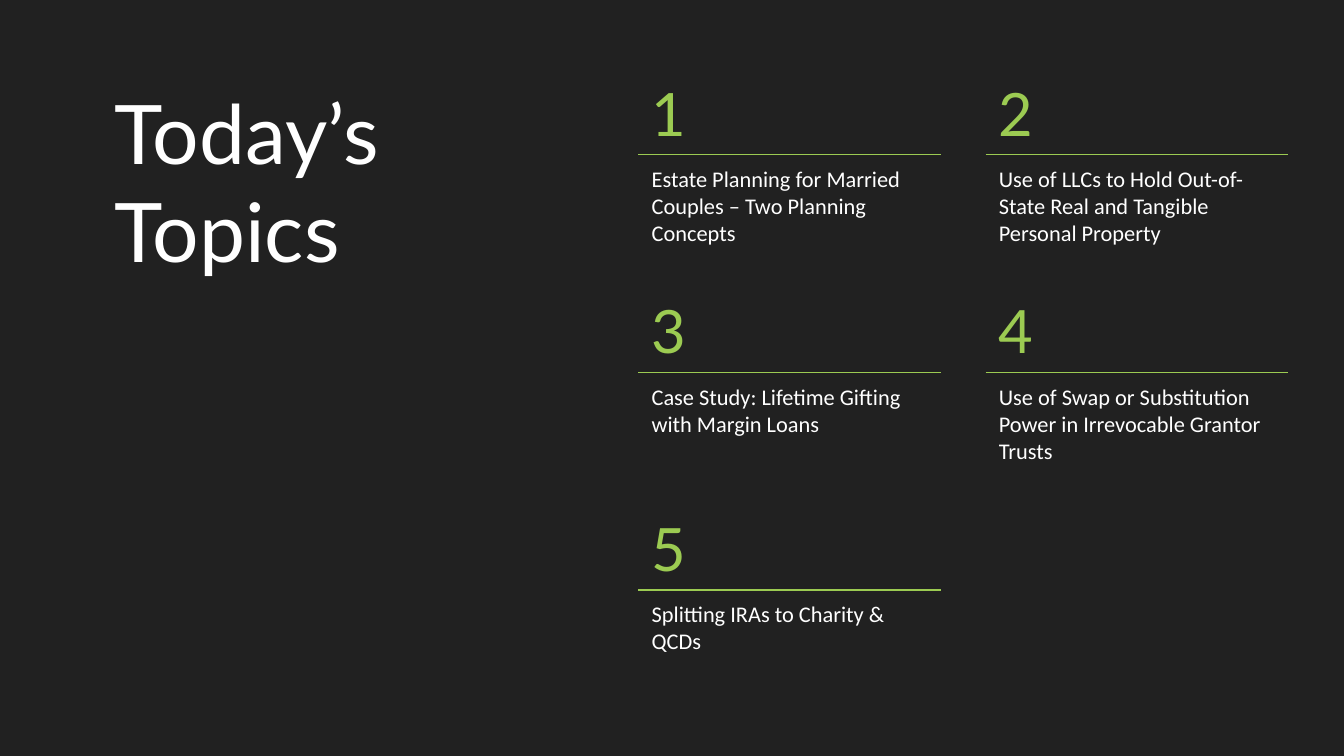
from lxml import etree
from pptx import Presentation
from pptx.dml.color import RGBColor
from pptx.enum.shapes import MSO_CONNECTOR
from pptx.enum.text import MSO_ANCHOR, MSO_AUTO_SIZE, PP_ALIGN
from pptx.oxml.ns import qn
from pptx.util import Inches, Pt

STRAIGHT = MSO_CONNECTOR.STRAIGHT
TOP = MSO_ANCHOR.TOP
LEFT = PP_ALIGN.LEFT
NO_FIT = MSO_AUTO_SIZE.NONE

# Content
TITLE = "Today’s Topics"
TOPICS = [
    "Estate Planning for Married Couples – Two Planning Concepts",
    "Use of LLCs to Hold Out-of- State Real and Tangible Personal Property",
    "Case Study: Lifetime Gifting with Margin Loans",
    "Use of Swap or Substitution Power in Irrevocable Grantor Trusts",
    "Splitting IRAs to Charity & QCDs",
]
COLORS = {"back": "212121", "text": "FFFFFF", "accent": "9CCB52"}

# Slide in 16:9 and topic grid, in inches
WIDTH = 10
HEIGHT = WIDTH * 9 / 16
COLUMNS = 2
GRID_LEFT, GRID_TOP = 4.75, 0.52
TOPIC_WIDTH, NUMBER_WIDTH, BOX_HEIGHT = 2.25, 1.08, 0.67
COLUMN_STEP, ROW_STEP = TOPIC_WIDTH + WIDTH / 30, 1.62
RULE_DROP, TOPIC_DROP = 0.63, 0.66


def color(name):
    return RGBColor.from_string(COLORS[name])


def write(sp, text, size, font="Lato", fill="text"):
    tf = sp.text_frame
    tf.auto_size = NO_FIT
    tf.word_wrap = True
    tf.vertical_anchor = TOP
    p = tf.paragraphs[0]
    p.alignment = LEFT
    r = p.add_run()
    r.text = text
    r.font.size = Pt(size)
    r.font.name = font
    r.font.color.rgb = color(fill)


def add_text(s, x, y, w, h, text, **fmt):
    sp = s.shapes.add_textbox(Inches(x), Inches(y), Inches(w), Inches(h))
    write(sp, text, **fmt)


def add_rule(s, x, y, w):
    rule = s.shapes.add_connector(
        STRAIGHT, Inches(x), Inches(y), Inches(x + w), Inches(y))
    rule.line.color.rgb = color("accent")
    rule.line.width = Pt(0.75)
    etree.SubElement(rule._element.spPr, qn("a:effectLst"))


prs = Presentation()
prs.slide_width, prs.slide_height = Inches(WIDTH), Inches(HEIGHT)
s = prs.slides.add_slide(prs.slide_layouts[5])
s.background.fill.solid()
s.background.fill.fore_color.rgb = color("back")

# Title
title = s.shapes.title
title.left, title.top = Inches(0.75), Inches(0.56)
title.width, title.height = Inches(3.58), Inches(1.21)
write(title, TITLE, size=44)

# Numbered topics, row by row
for i, topic in enumerate(TOPICS):
    row, column = divmod(i, COLUMNS)
    x = GRID_LEFT + column * COLUMN_STEP
    y = GRID_TOP + row * ROW_STEP
    add_text(s, x, y, NUMBER_WIDTH, BOX_HEIGHT, str(i + 1),
             size=32, fill="accent")
    add_rule(s, x, y + RULE_DROP, TOPIC_WIDTH)
    add_text(s, x, y + TOPIC_DROP, TOPIC_WIDTH, BOX_HEIGHT, topic,
             size=12, font="Calibri")

prs.save("out.pptx")
